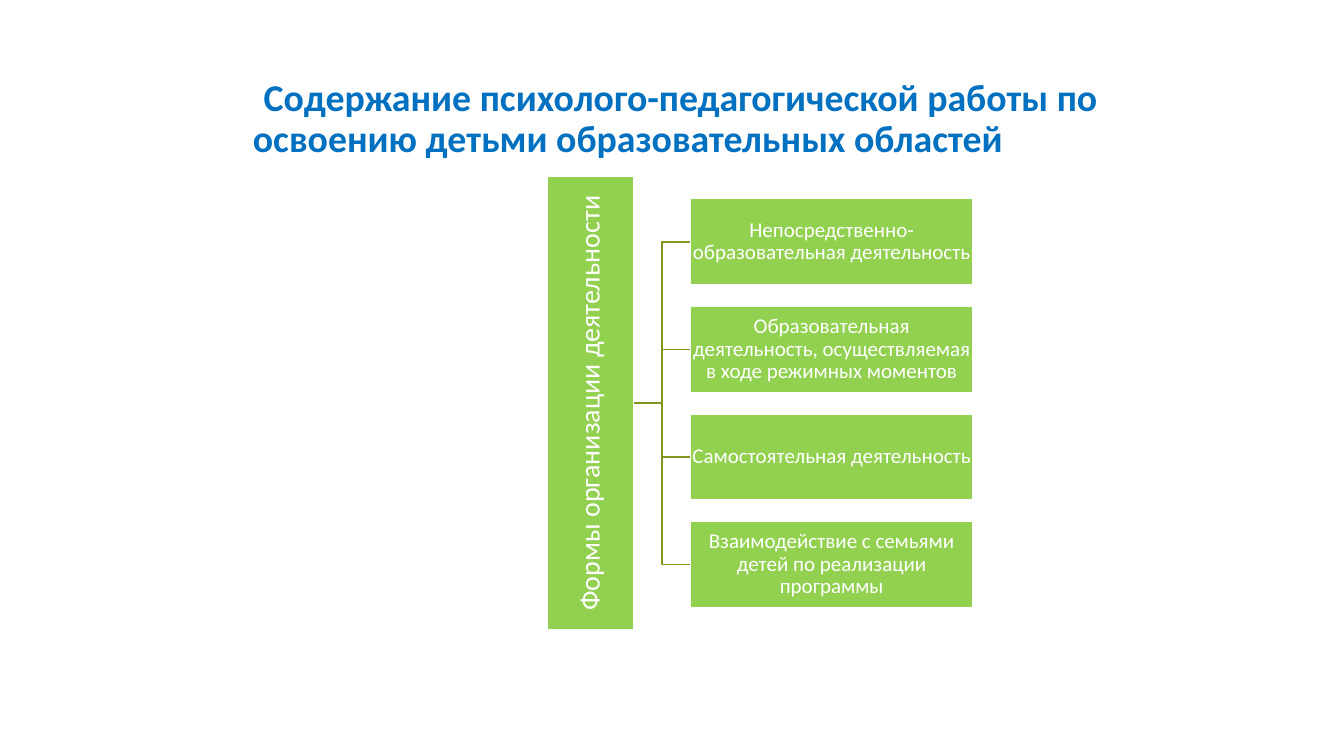
from pptx import Presentation
from pptx.dml.color import RGBColor
from pptx.enum.shapes import MSO_CONNECTOR, MSO_SHAPE
from pptx.enum.text import MSO_ANCHOR, MSO_AUTO_SIZE, PP_ALIGN
from pptx.oxml.ns import qn
from pptx.util import Cm, Pt

COLORS = {"title": "0070C0", "box": "92D050", "box_text": "FFFFFF",
          "outline": "FFFFFF", "branch": "85931F"}
FONT = "Calibri"
TITLE = ("Содержание психолого-педагогической работы по "
         "освоению детьми образовательных областей")
ROOT = "Формы организации деятельности"
FORMS = [
    "Непосредственно-образовательная деятельность",
    "Образовательная деятельность, осуществляемая в ходе режимных моментов",
    "Самостоятельная деятельность",
    "Взаимодействие с семьями детей по реализации программы",
]

# Lengths in centimetres
ROOT_LENGTH, BOX_HEIGHT, FORM_WIDTH = 11.43, 2.17, 7.12
ROOT_CENTER_X, CENTER_Y = 14.88, 10.16
FORM_LEFT, FORM_PITCH = 17.4, 2.71


def rgb(name):
    return RGBColor.from_string(COLORS[name])


def write_text(frame, text, *, size, color, bold=False, align=PP_ALIGN.CENTER,
               anchor=MSO_ANCHOR.MIDDLE, margin=None):
    frame.word_wrap = True
    frame.auto_size = MSO_AUTO_SIZE.NONE
    frame.vertical_anchor = anchor
    if margin is not None:
        frame.margin_left = frame.margin_right = Cm(margin)
        frame.margin_top = frame.margin_bottom = Cm(margin)
    paragraph = frame.paragraphs[0]
    paragraph.alignment = align
    paragraph.line_spacing = 0.9
    run = paragraph.add_run()
    run.text = text
    run.font.name = FONT
    run.font.size = Pt(size)
    run.font.bold = bold
    run.font.color.rgb = rgb(color)
    return paragraph


def add_title(slide):
    title = slide.shapes.title
    title.left, title.top = Cm(6.12), Cm(0.84)
    title.width, title.height = Cm(26.04), Cm(3.33)
    heading = write_text(title.text_frame, TITLE, size=27, color="title", bold=True,
                         align=PP_ALIGN.LEFT, anchor=MSO_ANCHOR.BOTTOM)
    heading._p.get_or_add_pPr().set("indent", str(Cm(0.27)))


def add_box(slide, text, center_x, center_y, width, *, size, rotation=0):
    box = slide.shapes.add_shape(
        MSO_SHAPE.RECTANGLE, Cm(center_x - width / 2), Cm(center_y - BOX_HEIGHT / 2),
        Cm(width), Cm(BOX_HEIGHT))
    box.rotation = rotation
    box.shadow.inherit = False
    box.fill.solid()
    box.fill.fore_color.rgb = rgb("box")
    box.line.color.rgb = rgb("outline")
    box.line.width = Pt(1)
    write_text(box.text_frame, text, size=size, color="box_text", margin=0.03)


def add_branch(slide, form_y):
    branch = slide.shapes.add_connector(
        MSO_CONNECTOR.ELBOW, Cm(ROOT_CENTER_X + BOX_HEIGHT / 2), Cm(CENTER_Y),
        Cm(FORM_LEFT), Cm(form_y))
    branch.line.color.rgb = rgb("branch")
    branch.line.width = Pt(1)
    properties = branch._element.spPr
    properties.append(properties.makeelement(qn("a:effectLst"), {}))


def main():
    presentation = Presentation()
    presentation.slide_width, presentation.slide_height = Cm(33.87), Cm(19.05)
    slide = presentation.slides.add_slide(presentation.slide_layouts[5])
    add_title(slide)

    middle = (len(FORMS) - 1) / 2
    form_centers = [CENTER_Y + (i - middle) * FORM_PITCH for i in range(len(FORMS))]
    for form_y in form_centers:
        add_branch(slide, form_y)
    add_box(slide, ROOT, ROOT_CENTER_X, CENTER_Y, ROOT_LENGTH, size=20, rotation=270)
    for form, form_y in zip(FORMS, form_centers):
        add_box(slide, form, FORM_LEFT + FORM_WIDTH / 2, form_y, FORM_WIDTH, size=15)

    presentation.save("out.pptx")


if __name__ == "__main__":
    main()
